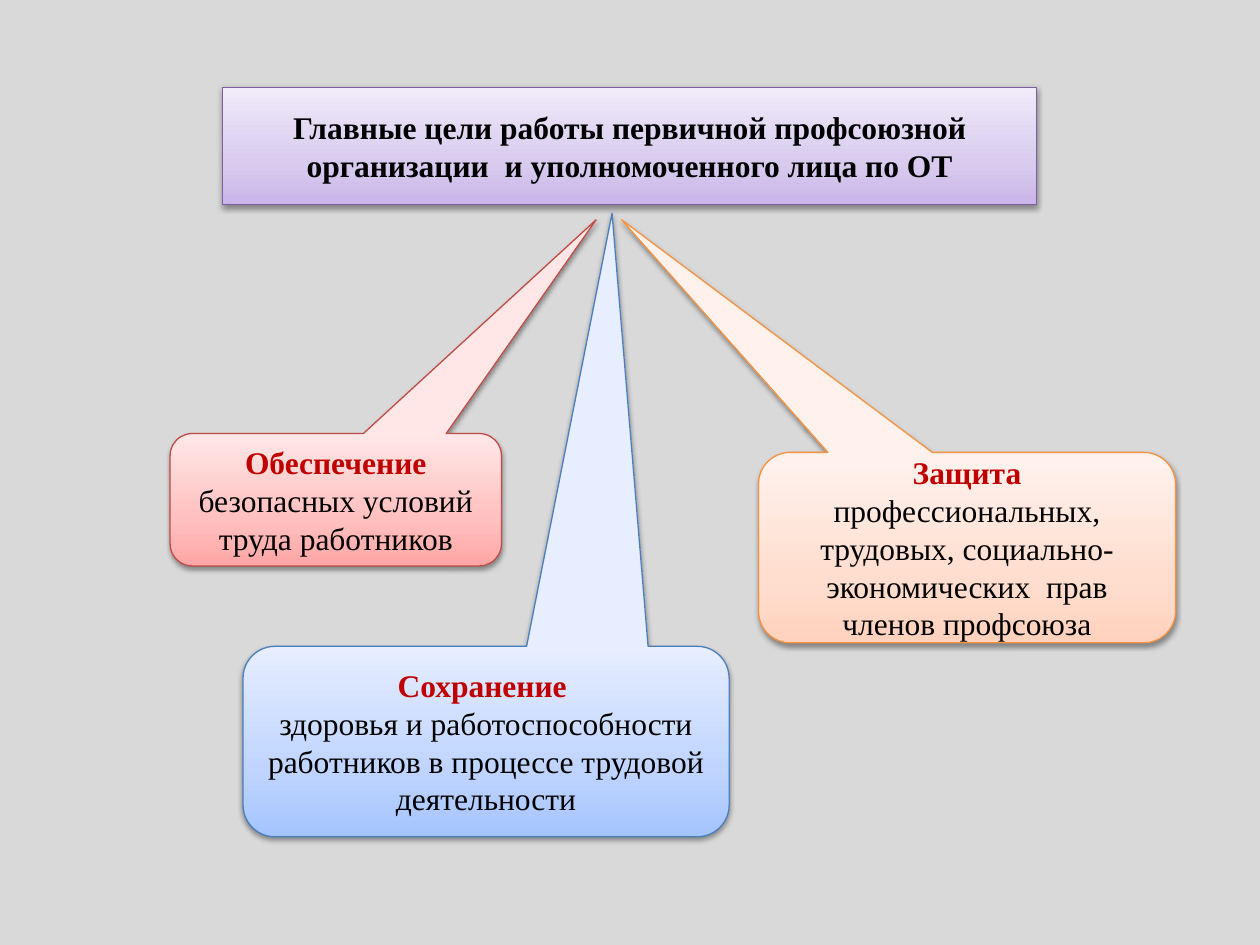
from copy import deepcopy

from lxml.etree import SubElement
from pptx import Presentation
from pptx.dml.color import RGBColor
from pptx.enum.shapes import MSO_SHAPE
from pptx.enum.text import MSO_ANCHOR, PP_ALIGN
from pptx.oxml.ns import qn
from pptx.util import Cm, Pt

FONT = "Times New Roman"
COLORS = {
    "background": "D9D9D9",
    "text": "000000",
    "accent": "C00000",
    "shadow": "000000",
}
# Line colour, then gradient colours from the bottom edge to the top edge
THEMES = {
    "purple": ("7D60A0", ("C9B5E8", "D8CBEE", "F0EAF9")),
    "red": ("BF4C48", ("FFA6A5", "FFC0BF", "FFE7E7")),
    "orange": ("F69240", ("FFD2BD", "FFDED0", "FFF2ED")),
    "blue": ("4B7EBC", ("A4C4FF", "BFD4FF", "E6EEFF")),
}
GRADIENT_POSITIONS = (0, 0.35, 1)

TITLE = "Главные цели работы первичной профсоюзной организации  и уполномоченного лица по ОТ"
# Theme, box (left, top, width, height), pointer tip, paragraphs of (text, is heading) runs
GOALS = [
    ("red", (3.43, 8.74, 6.68, 2.67), (12.02, 4.43),
     [[("Обеспечение ", True), ("безопасных условий труда работников", False)]]),
    ("orange", (15.29, 9.12, 8.41, 3.84), (12.53, 4.43),
     [[("Защита", True),
       (" профессиональных, трудовых, социально-экономических  прав членов профсоюза", False)]]),
    ("blue", (4.9, 13.03, 9.8, 3.84), (12.34, 4.3),
     [[("Сохранение ", True)],
      [("здоровья и работоспособности работников в процессе трудовой деятельности", False)]]),
]


def add_shadow(shape):
    shape.shadow.inherit = False
    effects = shape._element.spPr.find(qn("a:effectLst"))
    shadow = SubElement(effects, qn("a:outerShdw"), blurRad=str(Pt(3.1)), dist=str(Pt(1.6)),
                        dir="5400000", rotWithShape="0")
    color = SubElement(shadow, qn("a:srgbClr"), val=COLORS["shadow"])
    SubElement(color, qn("a:alpha"), val="38000")


def apply_theme(shape, theme):
    line_color, gradient = THEMES[theme]
    shape.fill.gradient()
    shape.fill.gradient_angle = 90
    stop_list = next(shape._element.spPr.iter(qn("a:gsLst")))
    stop_list.append(deepcopy(stop_list[-1]))
    for stop, position, color in zip(shape.fill.gradient_stops, GRADIENT_POSITIONS, gradient):
        stop.position = position
        stop.color.rgb = RGBColor.from_string(color)
    shape.line.color.rgb = RGBColor.from_string(line_color)
    shape.line.width = Pt(0.75)
    add_shadow(shape)


def add_panel(page, kind, box, theme):
    shape = page.shapes.add_shape(kind, *(Cm(length) for length in box))
    apply_theme(shape, theme)
    shape.text_frame.word_wrap = True
    shape.text_frame.vertical_anchor = MSO_ANCHOR.MIDDLE
    return shape


def add_span(para, text, color, bold):
    para.alignment = PP_ALIGN.CENTER
    span = para.add_run()
    span.text = text
    span.font.name = FONT
    span.font.size = Pt(18)
    span.font.bold = bold
    span.font.color.rgb = RGBColor.from_string(COLORS[color])


def add_title(page, box):
    shape = add_panel(page, MSO_SHAPE.RECTANGLE, box, "purple")
    add_span(shape.text_frame.paragraphs[0], TITLE, "text", True)


def add_goal(page, theme, box, tip, paragraphs):
    """Add a rounded callout whose pointer ends at tip."""
    shape = add_panel(page, MSO_SHAPE.ROUNDED_RECTANGULAR_CALLOUT, box, theme)
    left, top, width, height = box
    shape.adjustments[0] = (tip[0] - left) / width - 0.5
    shape.adjustments[1] = (tip[1] - top) / height - 0.5
    frame = shape.text_frame
    for index, runs in enumerate(paragraphs):
        para = frame.add_paragraph() if index else frame.paragraphs[0]
        for text, is_heading in runs:
            add_span(para, text, "accent" if is_heading else "text", is_heading)


def main():
    deck = Presentation()
    deck.slide_width, deck.slide_height = Cm(25.4), Cm(19.05)
    page = deck.slides.add_slide(deck.slide_layouts[6])
    page.background.fill.solid()
    page.background.fill.fore_color.rgb = RGBColor.from_string(COLORS["background"])
    add_title(page, (4.49, 1.76, 16.41, 2.37))
    for goal in GOALS:
        add_goal(page, *goal)
    deck.save("out.pptx")


if __name__ == "__main__":
    main()
